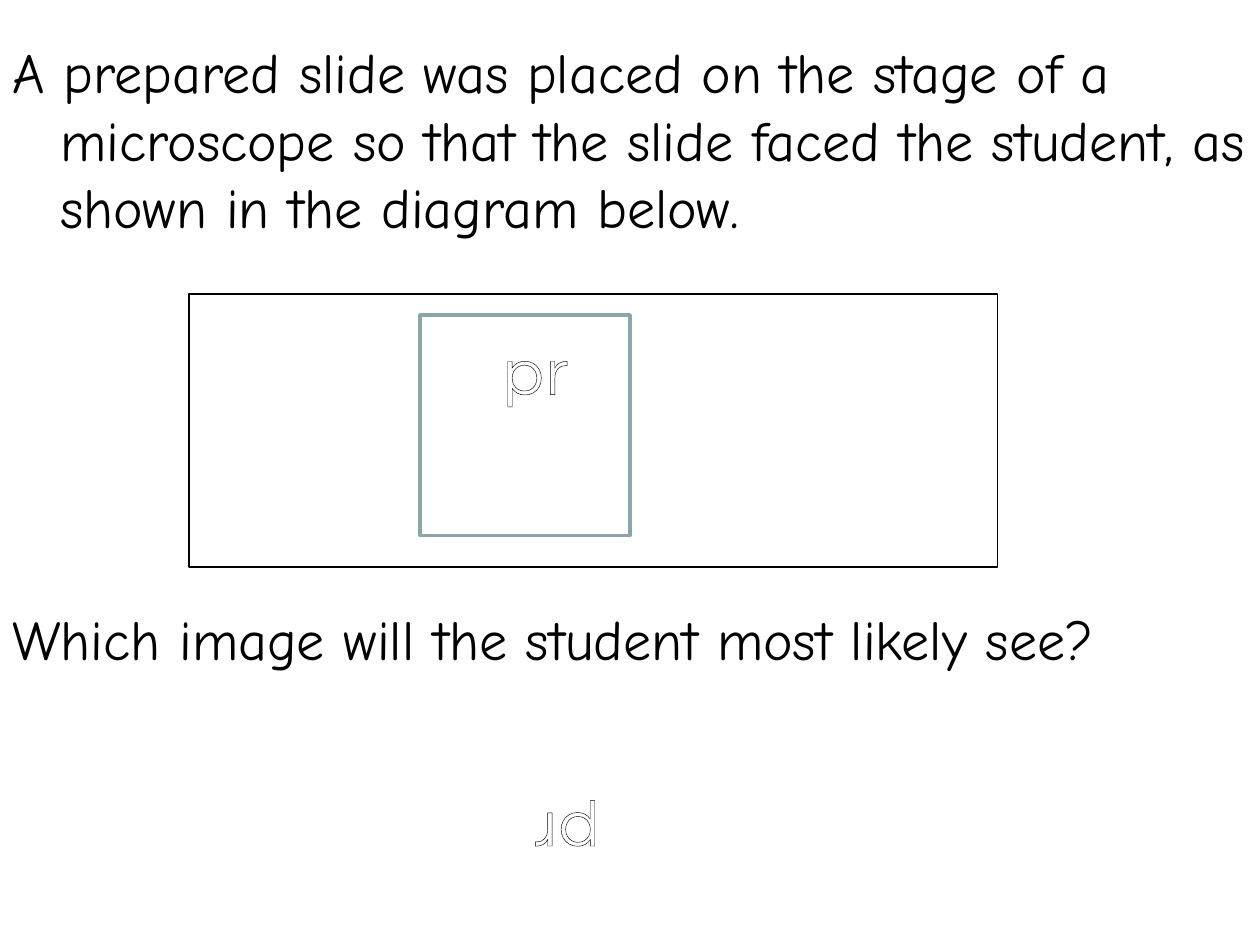
from lxml import etree
from pptx import Presentation
from pptx.dml.color import RGBColor
from pptx.enum.shapes import MSO_SHAPE
from pptx.enum.text import MSO_ANCHOR, MSO_AUTO_SIZE, PP_ALIGN
from pptx.oxml.ns import qn
from pptx.util import Inches, Pt

RECT = MSO_SHAPE.RECTANGLE
TOP = MSO_ANCHOR.TOP
FIXED, GROW = MSO_AUTO_SIZE.NONE, MSO_AUTO_SIZE.SHAPE_TO_FIT_TEXT
LEFT, CENTER = PP_ALIGN.LEFT, PP_ALIGN.CENTER
BLACK, WHITE, TEAL = "000000", "FFFFFF", "8AA6A8"
TITLE_AND_BODY = 1


def paint(fill, color):
    fill.solid()
    fill.fore_color.rgb = RGBColor.from_string(color)


class Sheet:
    """Holds the text style and the slide; places parts on 1/12 inch cells."""

    text_font, text_size = "Comic Neue", 32
    mark_font, mark_size = "Montserrat", 36

    def __init__(self, deck):
        self.slide = deck.slides.add_slide(deck.slide_layouts[TITLE_AND_BODY])
        paint(self.slide.background.fill, WHITE)
        title = self.slide.shapes.title._element
        title.getparent().remove(title)

    def cells(self, *box):
        return [Inches(n / 12) for n in box]

    def set_text(self, shape, text, font, size, color, align=LEFT):
        frame = shape.text_frame
        frame.text = text
        frame.vertical_anchor = TOP
        para = frame.paragraphs[0]
        para.alignment = align
        run = para.runs[0]
        run.font.name, run.font.size = font, Pt(size)
        paint(run.font.fill, color)
        return para

    def body(self, text, *box):
        """Fill the body placeholder with a hanging paragraph, no bullet."""
        shape = self.slide.placeholders[1]
        shape.left, shape.top, shape.width, shape.height = self.cells(*box)
        para = self.set_text(shape, text, self.text_font, self.text_size, BLACK)
        shape.text_frame.auto_size = FIXED
        props = para._p.get_or_add_pPr()
        props.set("marL", str(Inches(0.38)))
        props.set("indent", str(-Inches(0.38)))
        etree.SubElement(props, qn("a:buNone"))

    def label(self, text, *box):
        shape = self.slide.shapes.add_textbox(*self.cells(*box))
        self.set_text(shape, text, self.text_font, self.text_size, BLACK)
        shape.text_frame.word_wrap = True
        shape.text_frame.auto_size = GROW

    def mark(self, text, *box, turn=0):
        """Add white letters with a thin black outline."""
        shape = self.slide.shapes.add_textbox(*self.cells(*box))
        shape.rotation = turn
        para = self.set_text(
            shape, text, self.mark_font, self.mark_size, WHITE, CENTER
        )
        shape.text_frame.word_wrap = False
        line = etree.Element(qn("a:ln"), w=str(Pt(0.75)))
        fill = etree.SubElement(line, qn("a:solidFill"))
        etree.SubElement(fill, qn("a:srgbClr"), val=BLACK)
        para.runs[0]._r.get_or_add_rPr().insert(0, line)

    def frame(self, color, width, *box):
        shape = self.slide.shapes.add_shape(RECT, *self.cells(*box))
        shape.shadow.inherit = False
        shape.fill.background()
        paint(shape.line.fill, color)
        shape.line.width = Pt(width)


def main():
    deck = Presentation()
    deck.slide_width, deck.slide_height = Inches(10), Inches(7.5)
    sheet = Sheet(deck)
    sheet.body(
        "A prepared slide was placed on the stage of a microscope so that "
        "the slide faced the student, as shown in the diagram below.",
        0, 3, 120, 21,
    )
    sheet.frame(BLACK, 0.75, 18, 28, 77, 26)
    sheet.mark("pr", 41, 31, 20, 18)
    sheet.frame(TEAL, 2, 40, 30, 20, 21)
    sheet.label("Which image will the student most likely see?", 0, 57, 120, 7.5)
    sheet.mark("pr", 44, 66, 20, 18, turn=180)
    deck.save("out.pptx")


if __name__ == "__main__":
    main()
